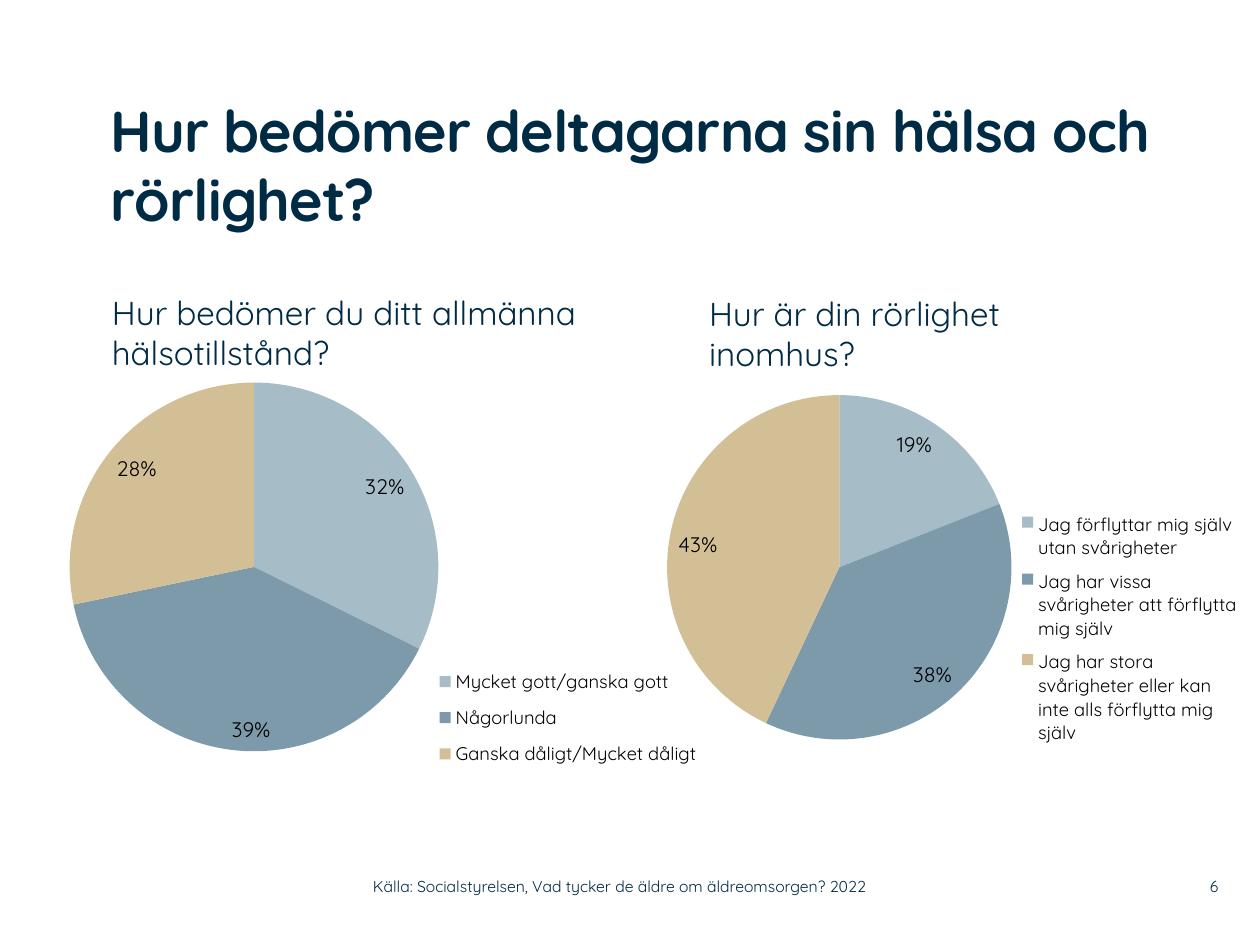
from lxml.etree import SubElement
from pptx import Presentation
from pptx.chart.data import CategoryChartData
from pptx.dml.color import RGBColor
from pptx.enum.chart import XL_CHART_TYPE, XL_LABEL_POSITION, XL_LEGEND_POSITION
from pptx.enum.text import MSO_ANCHOR, PP_ALIGN
from pptx.oxml.ns import qn
from pptx.util import Inches, Pt

COLOURS = {"navy": "002B45", "black": "000000", "mist": "A6BCC6", "steel": "7D9AAA", "sand": "D3BF96"}
SLICES = ("mist", "steel", "sand")
FONT = "Quicksand"
COLUMNS, ROWS = 100, 75


class Deck:
    def __init__(self):
        self.presentation = Presentation()
        self.presentation.slide_width = Inches(10)
        self.presentation.slide_height = Inches(7.5)
        self.slide = self.presentation.slides.add_slide(self.presentation.slide_layouts[6])

    def place(self, left, top, width, height):
        column = self.presentation.slide_width / COLUMNS
        row = self.presentation.slide_height / ROWS
        return [round(n * unit) for n, unit in zip((left, top, width, height), (column, row) * 2)]

    def style(self, font, size, colour="navy", bold=False):
        values = {"name": FONT, "size": Pt(size), "bold": bold}
        for key, value in values.items():
            setattr(font, key, value)
        font.color.rgb = RGBColor.from_string(COLOURS[colour])

    def text(self, words, at, size, bold=False, inset=True, spacing=None,
             anchor=MSO_ANCHOR.TOP, align=PP_ALIGN.LEFT):
        frame = self.slide.shapes.add_textbox(*self.place(*at)).text_frame
        values = {"word_wrap": True, "vertical_anchor": anchor}
        if not inset:
            values.update({f"margin_{side}": 0 for side in ("left", "top", "right", "bottom")})
        for key, value in values.items():
            setattr(frame, key, value)
        paragraph = frame.paragraphs[0]
        paragraph.alignment = align
        run = paragraph.add_run()
        run.text = words
        self.style(run.font, size, bold=bold)
        if spacing:
            run.font._element.set("spc", str(round(spacing * 100)))

    def layout(self, parent, shares, inner=False):
        element = parent.get_or_add_layout() if hasattr(parent, "get_or_add_layout") else parent.find(qn("c:layout"))
        if element is None:
            element = SubElement(parent, qn("c:layout"))
            parent.insert(0, element)
        for child in list(element):
            element.remove(child)
        manual = SubElement(element, qn("c:manualLayout"))
        settings = [("layoutTarget", "inner")] if inner else []
        settings += [("xMode", "edge"), ("yMode", "edge"), *zip("xywh", shares)]
        for tag, value in settings:
            SubElement(manual, qn(f"c:{tag}")).set("val", str(value))

    def pie(self, answers, at, plot_shares, legend_shares):
        data = CategoryChartData()
        data.categories = list(answers)
        data.add_series("Series 1", list(answers.values()))
        chart = self.slide.shapes.add_chart(XL_CHART_TYPE.PIE, *self.place(*at), data).chart
        chart.has_title = False
        chart.has_legend = True
        self.style(chart.font, 10, "black")
        chart.legend.position = XL_LEGEND_POSITION.RIGHT
        chart.legend.include_in_layout = False
        self.style(chart.legend.font, 10.5, "black")
        plot = chart.plots[0]
        plot.vary_by_categories = True
        for index, colour in enumerate(SLICES):
            fill = plot.series[0].points[index].format.fill
            fill.solid()
            fill.fore_color.rgb = RGBColor.from_string(COLOURS[colour])
        labels = plot.series[0].data_labels
        values = {"show_percentage": True, "show_value": False, "number_format": "0%",
                  "number_format_is_linked": False, "position": XL_LABEL_POSITION.INSIDE_END}
        for key, value in values.items():
            setattr(labels, key, value)
        self.style(labels.font, 12, "black")
        self.layout(chart._chartSpace.chart.plotArea, plot_shares, inner=True)
        self.layout(chart.legend._element, legend_shares)


def main():
    deck = Deck()
    deck.text("Hur bedömer deltagarna sin hälsa och rörlighet?", (8.8, 7.5, 82.7, 11.2), 33,
              bold=True, inset=False, spacing=-0.5)
    deck.text("Hur bedömer du ditt allmänna hälsotillstånd?", (7.9, 22.7, 40.7, 7.4), 19)
    deck.text("Hur är din rörlighet inomhus?", (55.3, 22.8, 28, 7.4), 19)
    deck.pie({"Mycket gott/ganska gott": 32, "Någorlunda": 39, "Ganska dåligt/Mycket dåligt": 28},
             (3.9, 27.9, 54.2, 34.2), (0.03, 0.07, 0.54, 0.86), (0.55, 0.71, 0.42, 0.28))
    deck.pie({"Jag förflyttar mig själv utan svårigheter": 19,
              "Jag har vissa svårigheter att förflytta mig själv": 38,
              "Jag har stora svårigheter eller kan inte alls förflytta mig själv": 43},
             (49, 28.1, 54.2, 40.8), (0.07, 0.08, 0.51, 0.67), (0.59, 0.29, 0.32, 0.49))
    footer = {"size": 9, "inset": False, "anchor": MSO_ANCHOR.MIDDLE}
    deck.text("Källa: Socialstyrelsen, Vad tycker de äldre om äldreomsorgen? 2022",
              (29.6, 68.9, 44.3, 2.9), **footer)
    deck.text("6", (92, 68.9, 4.7, 2.9), align=PP_ALIGN.RIGHT, **footer)
    deck.presentation.save("out.pptx")


if __name__ == "__main__":
    main()
